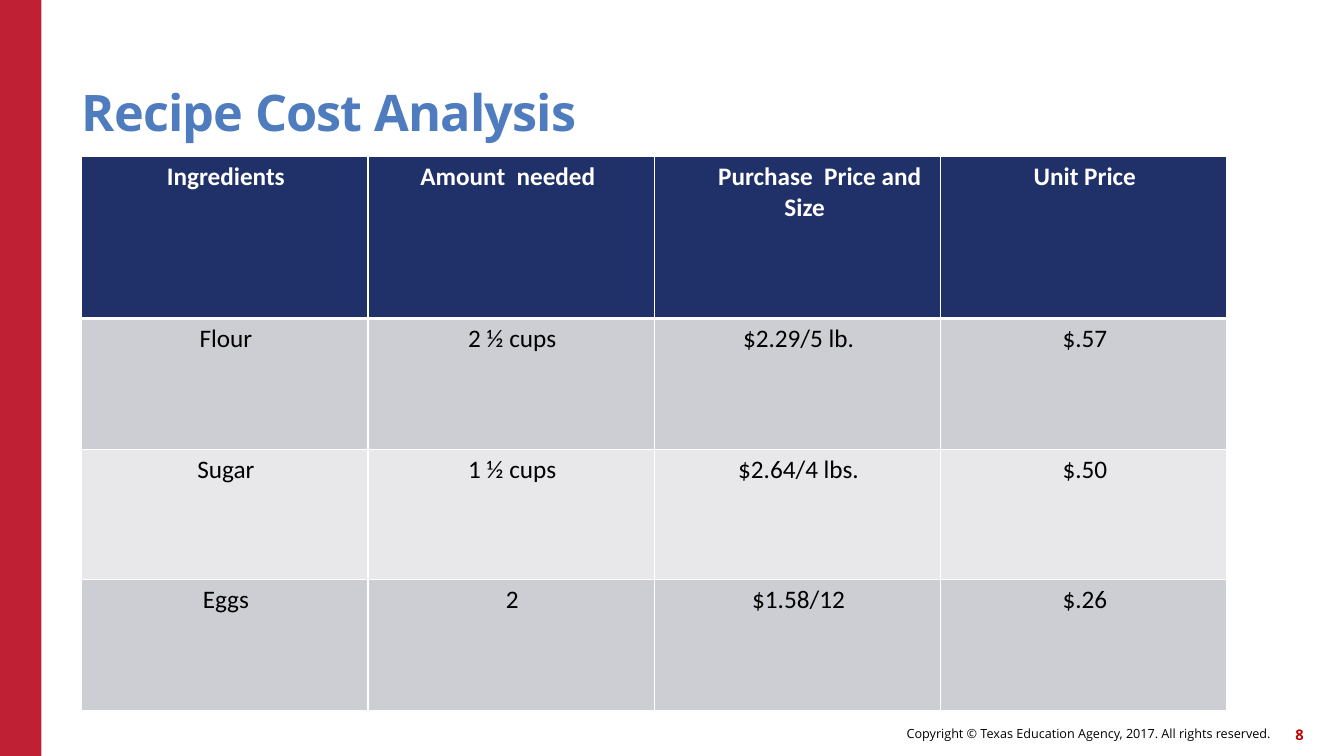
from dataclasses import dataclass

from lxml import etree
from pptx import Presentation, util as u
from pptx.dml.color import RGBColor
from pptx.enum import shapes, text
from pptx.oxml import ns

COLORS = {
    "red": "C02033", "number": "C00000", "title": "4E7CBE", "navy": "203069",
    "dark band": "CDCDD4", "light band": "E8E8EB", "white": "FFFFFF", "black": "000000",
}
WIDTH, HEIGHT = u.Inches(13.33), u.Inches(7.5)
LEFT, CENTER, RIGHT = text.PP_ALIGN.LEFT, text.PP_ALIGN.CENTER, text.PP_ALIGN.RIGHT
BODY_FONT, BRAND_FONT = "Calibri", "Open Sans"
HEADER_SHARE, ROW_SHARE = 21.47, 17.27


@dataclass(frozen=True)
class Area:
    left: float
    top: float
    width: float
    height: float

    def lengths(self) -> tuple[int, int, int, int]:
        return (across(self.left), down(self.top), across(self.width), down(self.height))


@dataclass(frozen=True)
class Style:
    font: str
    size: float
    color: str
    bold: bool = False
    align: int = CENTER


@dataclass(frozen=True)
class Footer:
    words: str
    area: Area
    style: Style


@dataclass(frozen=True)
class Heading:
    words: str
    align: int = CENTER
    margin: float = 0.02
    indent: float = 0


TITLE_AREA = Area(6.08, 6, 82.52, 12.8)
TABLE_AREA = Area(6.08, 20.67, 85.22, HEADER_SHARE + 3 * ROW_SHARE)
FOOTERS = [
    Footer("Copyright © Texas Education Agency, 2017. All rights reserved.",
           Area(46.06, 94.93, 48.46, 4.27), Style(BRAND_FONT, 9, "black", align=RIGHT)),
    Footer("8", Area(93.85, 95.07, 3.15, 4.27),
           Style(BRAND_FONT, 10.5, "number", True, RIGHT)),
]
HEADINGS = [
    Heading("Ingredients"),
    Heading("Amount  needed", LEFT, 0.56, -0.04),
    Heading("Purchase  Price and Size", CENTER, 0.14, 0.3),
    Heading("Unit Price"),
]
INGREDIENTS = [
    ("Flour", "2 ½ cups", "$2.29/5 lb.", "$.57"),
    ("Sugar", "1 ½ cups", "$2.64/4 lbs.", "$.50"),
    ("Eggs", "2", "$1.58/12", "$.26"),
]


def across(share: float) -> int:
    return round(WIDTH * share / 100)


def down(share: float) -> int:
    return round(HEIGHT * share / 100)


def rgb(name: str) -> RGBColor:
    return RGBColor.from_string(COLORS[name])


def write(para, words: str, style: Style) -> None:
    para.text = words
    para.alignment = style.align
    para.font.name = style.font
    para.font.size = u.Pt(style.size)
    para.font.bold = style.bold
    para.font.color.rgb = rgb(style.color)


def clear_margins(frame) -> None:
    frame.margin_left = frame.margin_right = 0
    frame.margin_top = frame.margin_bottom = 0
    frame.word_wrap = True


def add_stripe(page) -> None:
    stripe = page.shapes.add_shape(
        shapes.MSO_SHAPE.RECTANGLE, *Area(0, 0, 3.08, 100).lengths())
    stripe.shadow.inherit = False
    stripe.fill.solid()
    stripe.fill.fore_color.rgb = rgb("red")
    stripe.line.fill.background()


def set_title(page) -> None:
    title = page.shapes.title
    title.left, title.top, title.width, title.height = TITLE_AREA.lengths()
    frame = title.text_frame
    clear_margins(frame)
    frame.auto_size = text.MSO_AUTO_SIZE.NONE
    frame.vertical_anchor = text.MSO_ANCHOR.BOTTOM
    para = frame.paragraphs[0]
    write(para, "Recipe Cost Analysis", Style(BRAND_FONT, 36, "title", True, LEFT))
    para.line_spacing = 0.9
    para.runs[0].font._element.set("spc", "-60")


def add_footer(page, footer: Footer) -> None:
    box = page.shapes.add_textbox(*footer.area.lengths())
    clear_margins(box.text_frame)
    box.text_frame.vertical_anchor = text.MSO_ANCHOR.MIDDLE
    write(box.text_frame.paragraphs[0], footer.words, footer.style)


def add_borders(cell, top: float, bottom: float) -> None:
    properties = cell._tc.get_or_add_tcPr()
    for side, points in (("L", 1), ("R", 1), ("T", top), ("B", bottom)):
        line = etree.SubElement(properties, ns.qn(f"a:ln{side}"), w=str(u.Pt(points)))
        fill = etree.SubElement(line, ns.qn("a:solidFill"))
        etree.SubElement(fill, ns.qn("a:srgbClr"), val=COLORS["white"])


def fill_cell(cell, heading: Heading, row: int) -> None:
    is_header = row == 0
    cell.margin_left = cell.margin_right = cell.margin_bottom = 0
    cell.margin_top = u.Inches(0.05)
    add_borders(cell, 3 if row == 1 else 1, 3 if is_header else 1)
    cell.fill.solid()
    band = "dark band" if row % 2 else "light band"
    cell.fill.fore_color.rgb = rgb("navy" if is_header else band)
    para = cell.text_frame.paragraphs[0]
    indents = para._p.get_or_add_pPr()
    indents.set("marL", str(u.Inches(heading.margin)))
    indents.set("indent", str(u.Inches(heading.indent)))
    color = "white" if is_header else "black"
    write(para, heading.words, Style(BODY_FONT, 18, color, is_header, heading.align))


def add_cost_table(page) -> None:
    rows = [HEADINGS] + [[Heading(words) for words in item] for item in INGREDIENTS]
    table = page.shapes.add_table(len(rows), len(HEADINGS), *TABLE_AREA.lengths()).table
    for row, headings in enumerate(rows):
        table.rows[row].height = down(ROW_SHARE if row else HEADER_SHARE)
        for column, heading in enumerate(headings):
            fill_cell(table.cell(row, column), heading, row)


def main() -> None:
    deck = Presentation()
    deck.slide_width, deck.slide_height = WIDTH, HEIGHT
    page = deck.slides.add_slide(deck.slide_layouts.get_by_name("Title Only"))
    add_stripe(page)
    for footer in FOOTERS:
        add_footer(page, footer)
    set_title(page)
    add_cost_table(page)
    deck.save("out.pptx")


if __name__ == "__main__":
    main()
